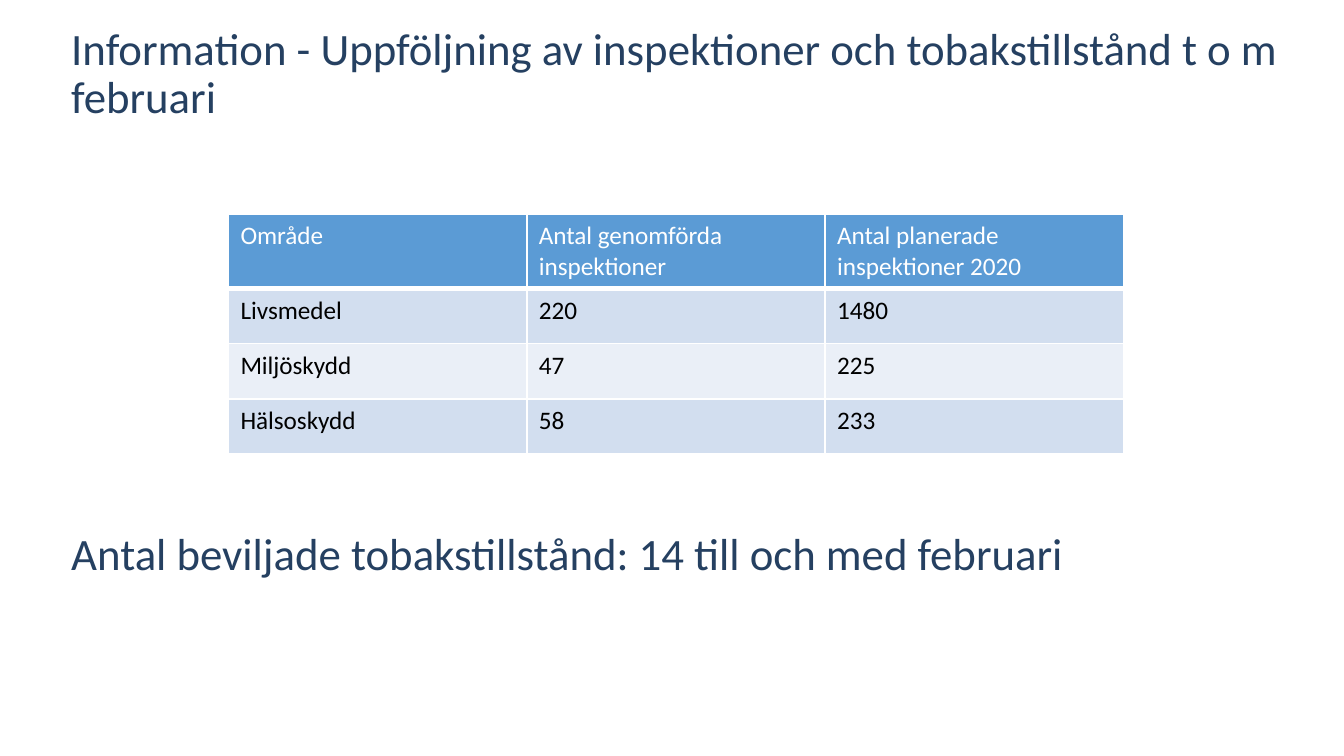
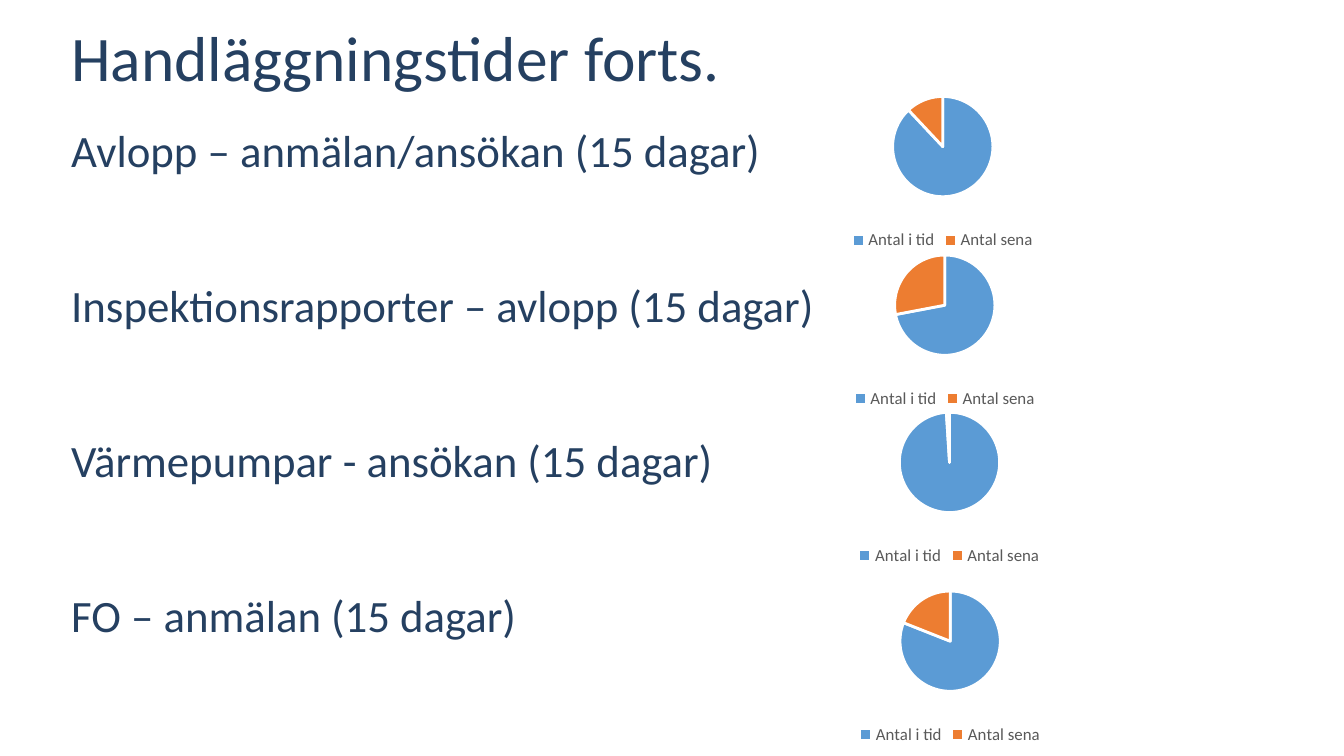
from dataclasses import dataclass

from lxml import etree
from pptx import Presentation
from pptx.chart.data import CategoryChartData
from pptx.dml.color import RGBColor
from pptx.enum.chart import XL_CHART_TYPE, XL_LEGEND_POSITION
from pptx.enum.text import MSO_ANCHOR, MSO_AUTO_SIZE, PP_ALIGN
from pptx.oxml.ns import qn
from pptx.util import Inches, Pt


@dataclass(frozen=True)
class Theme:
    font: str = "Calibri"
    navy: str = "254061"
    blue: str = "5B9BD5"
    orange: str = "ED7D31"
    band_dark: str = "D2DEEF"
    band_light: str = "EAEFF7"
    grey: str = "595959"
    black: str = "000000"
    white: str = "FFFFFF"
    title_size: float = 34
    text_size: float = 24
    table_size: float = 13.5
    chart_size: float = 10
    legend_size: float = 9


THEME = Theme()
TITLE_BOX = (0.53, 0.2, 9.13, 0.67)


def style_font(font, size, color):
    font.name = THEME.font
    font.size = Pt(size)
    font.bold = False
    font.color.rgb = RGBColor.from_string(color)


def fill_solid(fill, color):
    fill.solid()
    fill.fore_color.rgb = RGBColor.from_string(color)


def fill_placeholder(holder, box, lines, size, gap=0, drop=0):
    """Write unbulleted lines, gap points apart, starting drop inches down."""
    holder.left, holder.top, holder.width, holder.height = map(Inches, box)
    frame = holder.text_frame
    frame.text = "\n".join(lines)
    frame.word_wrap = True
    frame.auto_size = MSO_AUTO_SIZE.NONE
    frame.vertical_anchor = MSO_ANCHOR.TOP
    frame.margin_left = frame.margin_right = frame.margin_bottom = 0
    frame.margin_top = Inches(drop)
    for index, para in enumerate(frame.paragraphs):
        para.alignment = PP_ALIGN.LEFT
        para.line_spacing = 0.9
        para.space_before = Pt(gap if index else 0)
        properties = para._p.get_or_add_pPr()
        properties.set("marL", "0")
        properties.set("indent", "0")
        etree.SubElement(properties, qn("a:buNone"))
        for span in para.runs:
            style_font(span.font, size, THEME.navy)


def add_page(deck, title, title_size):
    page = deck.slides.add_slide(deck.slide_layouts[1])
    fill_placeholder(page.shapes.title, TITLE_BOX, [title], title_size)
    return page


def add_borders(cell, bottom):
    properties = cell._tc.get_or_add_tcPr()
    for side, width in (("L", 1), ("R", 1), ("T", 1), ("B", bottom)):
        line = etree.SubElement(properties, qn(f"a:ln{side}"), w=str(Pt(width)))
        solid = etree.SubElement(line, qn("a:solidFill"))
        etree.SubElement(solid, qn("a:srgbClr"), val=THEME.white)


def add_inspection_table(page, box, rows):
    holder = page.shapes.add_table(len(rows), len(rows[0]), *map(Inches, box))
    table = holder.table
    for row_index, values in enumerate(rows):
        header = row_index == 0
        band = THEME.band_dark if row_index % 2 else THEME.band_light
        table.rows[row_index].height = Inches(0.41)
        for column_index, value in enumerate(values):
            cell = table.cell(row_index, column_index)
            cell.text = value
            cell.margin_left = cell.margin_right = Inches(0.09)
            cell.margin_top = cell.margin_bottom = Inches(0.05)
            add_borders(cell, 3 if header else 1)
            fill_solid(cell.fill, THEME.blue if header else band)
            style_font(cell.text_frame.paragraphs[0].runs[0].font, THEME.table_size,
                       THEME.white if header else THEME.black)
    # The frame leaves room for the two-line header
    holder.height = Inches(box[3])


def add_timeliness_pie(page, box, values):
    data = CategoryChartData()
    data.categories = ["Antal i tid", "Antal sena"]
    data.add_series("Series 1", values)
    chart = page.shapes.add_chart(XL_CHART_TYPE.PIE, *map(Inches, box), data).chart
    style_font(chart.font, THEME.chart_size, THEME.black)
    chart.has_title = False

    # Legend
    chart.has_legend = True
    chart.legend.position = XL_LEGEND_POSITION.BOTTOM
    chart.legend.include_in_layout = False
    style_font(chart.legend.font, THEME.legend_size, THEME.grey)

    # Slices
    plot = chart.plots[0]
    plot.vary_by_categories = True
    for index, color in enumerate((THEME.blue, THEME.orange)):
        slice_format = plot.series[0].points[index].format
        fill_solid(slice_format.fill, color)
        slice_format.line.color.rgb = RGBColor.from_string(THEME.white)
        slice_format.line.width = Pt(1.5)


def build_inspections(deck):
    page = add_page(deck, "Information - Uppföljning av inspektioner och "
                    "tobakstillstånd t o m februari", THEME.text_size)
    # Summary below the table
    fill_placeholder(page.placeholders[1], (0.53, 1.14, 9.13, 4.15),
                     ["Antal beviljade tobakstillstånd: 14 till och med februari"],
                     THEME.text_size, drop=2.82)
    add_inspection_table(page, (1.7, 1.59, 6.66, 1.77), [
        ("Område", "Antal genomförda inspektioner", "Antal planerade inspektioner 2020"),
        ("Livsmedel", "220", "1480"),
        ("Miljöskydd", "47", "225"),
        ("Hälsoskydd", "58", "233"),
    ])


def build_handling_times(deck):
    page = add_page(deck, "Handläggningstider forts.", THEME.title_size)
    # Case type, pie box, share in time
    cases = [
        ("Avlopp – anmälan/ansökan (15 dagar)", (6.04, 0.58, 1.95, 1.32), 88),
        ("Inspektionsrapporter – avlopp (15 dagar)", (6.12, 1.76, 1.82, 1.32), 72),
        ("Värmepumpar - ansökan (15 dagar)", (5.87, 2.93, 2.39, 1.32), 99),
        ("FO – anmälan (15 dagar)", (6.11, 4.26, 1.92, 1.32), 81),
    ]
    fill_placeholder(page.placeholders[1], (0.53, 0.96, 9.13, 4.46),
                     [label for label, _, _ in cases], THEME.text_size, gap=57.1)
    for _, box, in_time in cases:
        add_timeliness_pie(page, box, (in_time, 100 - in_time))


def main():
    deck = Presentation()
    deck.slide_width = Inches(10)
    deck.slide_height = deck.slide_width * 9 // 16
    build_inspections(deck)
    build_handling_times(deck)
    deck.save("out.pptx")


if __name__ == "__main__":
    main()
